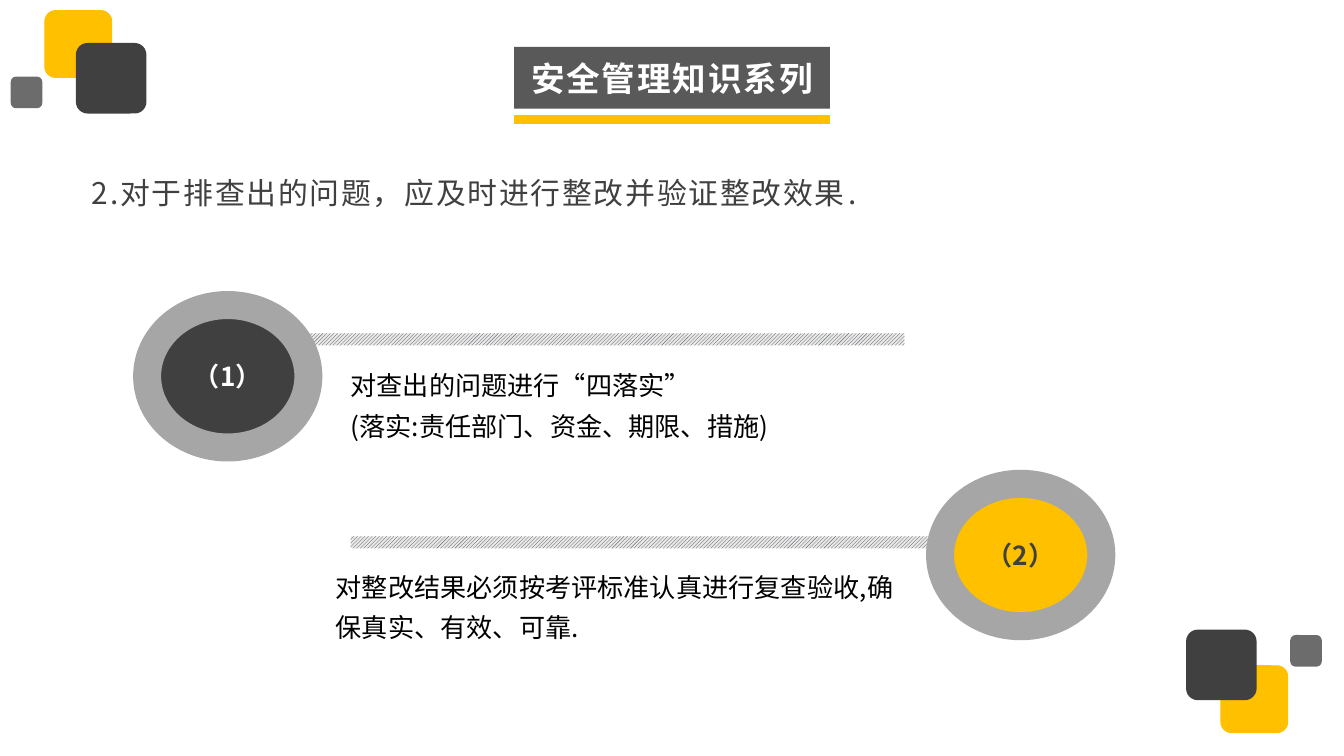
from dataclasses import dataclass

from lxml.etree import SubElement
from pptx import Presentation
from pptx.dml.color import RGBColor
from pptx.enum.dml import MSO_PATTERN
from pptx.enum.shapes import MSO_CONNECTOR, MSO_SHAPE
from pptx.enum.text import MSO_ANCHOR, PP_ALIGN
from pptx.oxml.ns import qn
from pptx.util import Inches, Pt

HUES = {
    "gold": "FFC000", "dark": "404040", "slate": "595959", "ring": "A6A6A6",
    "ink": "000000", "white": "FFFFFF", "hatch": "414455", "pale": "E8E8E6",
}
FACE = "Noto Sans CJK SC"
COLS, ROWS = 100, 56.25  # square grid cells over the whole slide
CELL = Inches(10) // COLS


@dataclass
class Box:
    x: float
    y: float
    w: float
    h: float

    def place(self) -> list[int]:
        return [round(n * CELL) for n in (self.x, self.y, self.w, self.h)]


@dataclass
class Style:
    size: int
    hue: str
    bold: bool = False
    gap: int = 0  # letter spacing in points
    lead: float = 1.0
    align: PP_ALIGN = PP_ALIGN.LEFT


@dataclass
class Tile:
    x: float
    y: float
    side: float
    hue: str
    alpha: int = 100


@dataclass
class Step:
    label: str
    disc: Box
    fill: str
    hue: str
    bar: Box
    note: Box
    lines: list[str]


def rgb(hue: str) -> RGBColor:
    return RGBColor.from_string(HUES[hue])


def add_form(slide, kind: MSO_SHAPE, box: Box, hue: str, alpha: int = 100):
    form = slide.shapes.add_shape(kind, *box.place())
    form.shadow.inherit = False
    form.line.fill.background()
    form.fill.solid()
    form.fill.fore_color.rgb = rgb(hue)
    if alpha < 100:
        tint = form._element.spPr.find(".//" + qn("a:srgbClr"))
        SubElement(tint, qn("a:alpha"), val=str(alpha * 1000))
    return form


def write(form, lines: list[str], style: Style, wrap: bool = True) -> None:
    frame = form.text_frame
    frame.word_wrap = wrap
    for i, line in enumerate(lines):
        para = frame.add_paragraph() if i else frame.paragraphs[0]
        para.text = line
        para.alignment = style.align
        para.line_spacing = style.lead
        font = para.font
        font.name, font.size, font.bold = FACE, Pt(style.size), style.bold
        font.color.rgb = rgb(style.hue)
        # East Asian face and letter spacing
        props = font._element
        SubElement(props, qn("a:ea"), typeface=FACE)
        if style.gap:
            props.set("spc", str(style.gap * 100))


def add_text(slide, box: Box, lines: list[str], style: Style, wrap: bool = True) -> None:
    write(slide.shapes.add_textbox(*box.place()), lines, style, wrap)


def add_rule(slide, x: float, y: float, end: float, hue: str, width: int) -> None:
    ends = [round(n * CELL) for n in (x, y, end, y)]
    rule = slide.shapes.add_connector(MSO_CONNECTOR.STRAIGHT, *ends)
    rule.line.color.rgb = rgb(hue)
    rule.line.width = Pt(width)
    SubElement(rule._element.spPr, qn("a:effectLst"))


def add_tile(slide, tile: Tile, turned: bool) -> None:
    x, y = tile.x, tile.y
    if turned:  # half turn towards the far corner
        x, y = COLS - 0.85 - x - tile.side, ROWS - 0.95 - y - tile.side
    box = Box(x, y, tile.side, tile.side)
    add_form(slide, MSO_SHAPE.ROUNDED_RECTANGLE, box, tile.hue, tile.alpha)


def add_bar(slide, box: Box) -> None:
    fill = add_form(slide, MSO_SHAPE.RECTANGLE, box, "pale").fill
    fill.patterned()
    fill.pattern = MSO_PATTERN.LIGHT_UPWARD_DIAGONAL
    fill.fore_color.rgb = rgb("hatch")
    fill.back_color.rgb = rgb("pale")


def add_step(slide, step: Step) -> None:
    add_bar(slide, step.bar)
    disc = add_form(slide, MSO_SHAPE.OVAL, step.disc, step.fill)
    disc.line.color.rgb = rgb("ring")
    disc.line.width = Pt(15)
    write(disc, [step.label], Style(14, step.hue, True, align=PP_ALIGN.CENTER))
    add_text(slide, step.note, step.lines, Style(14, "ink", lead=1.3))


TILES = [
    Tile(3.3, 0.75, 5.05, "gold"),
    Tile(5.65, 3.2, 5.25, "dark"),
    Tile(0.8, 5.7, 2.35, "dark", 77),
]
STEPS = [
    Step("（1）", Box(10.95, 22.7, 12, 10.6), "dark", "white",
         Box(21.9, 24.8, 45.4, 0.9), Box(25.1, 26.3, 36.2, 6.8),
         ["对查出的问题进行“四落实”", "(落实:责任部门、资金、期限、措施)"]),
    Step("（2）", Box(69.95, 36, 12, 10.6), "gold", "dark",
         Box(26.1, 39.9, 45.4, 0.9), Box(24, 41.3, 44.1, 6.8),
         ["对整改结果必须按考评标准认真进行复查验收,确保真实、有效、可靠."]),
]


def main() -> None:
    deck = Presentation()
    deck.slide_width, deck.slide_height = COLS * CELL, round(ROWS * CELL)
    slide = deck.slides.add_slide(deck.slide_layouts[6])

    # Corner tiles
    for turned in (False, True):
        for tile in TILES:
            add_tile(slide, tile, turned)

    # Title plate and underline
    plate = add_form(slide, MSO_SHAPE.RECTANGLE, Box(38.25, 3.5, 23.5, 4.6), "slate")
    plate.text_frame.vertical_anchor = MSO_ANCHOR.MIDDLE
    write(plate, ["安全管理知识系列"], Style(18, "white", True, 1, align=PP_ALIGN.CENTER))
    add_rule(slide, 38.25, 8.9, 61.75, "gold", 5)

    # Lead sentence
    add_text(slide, Box(5.85, 12.5, 59.1, 3.7),
             ["2.对于排查出的问题，应及时进行整改并验证整改效果."],
             Style(16, "dark", gap=1), wrap=False)

    # Numbered steps
    for step in STEPS:
        add_step(slide, step)

    deck.save("out.pptx")


if __name__ == "__main__":
    main()
